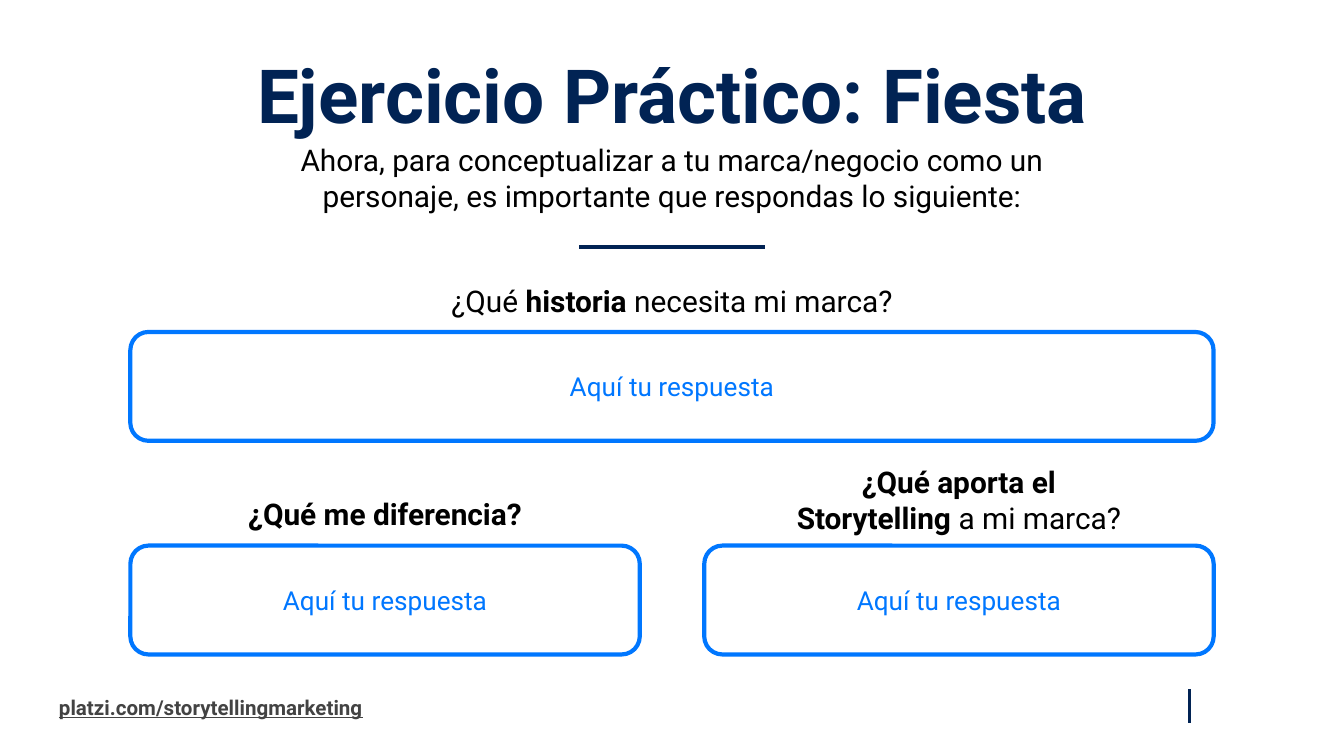
from lxml import etree
from pptx import Presentation
from pptx.dml.color import RGBColor
from pptx.enum.shapes import MSO_CONNECTOR, MSO_SHAPE
from pptx.enum.text import MSO_ANCHOR, MSO_AUTO_SIZE, PP_ALIGN
from pptx.oxml.ns import qn
from pptx.util import Inches, Pt

NAVY, BLUE, BLACK, GREY = "012354", "0077FF", "000000", "434343"
LEFT, WIDTH, GAP, ANSWER_H = 0.97, 8.06, 0.48, 0.81


def color(value):
    return RGBColor.from_string(value)


def place(sp, x, y, w, h):
    sp.left, sp.top, sp.width, sp.height = map(Inches, (x, y, w, h))


def write(sp, runs, size, hex_color, anchor=MSO_ANCHOR.MIDDLE,
          align=PP_ALIGN.CENTER, spacing=1.0, underline=False):
    """Fill a shape with one paragraph of (text, bold) runs."""
    tf = sp.text_frame
    frame = dict(word_wrap=True, auto_size=MSO_AUTO_SIZE.NONE, vertical_anchor=anchor)
    for side in ("left", "right", "top", "bottom"):
        frame["margin_" + side] = Inches(0.1)
    for name, value in frame.items():
        setattr(tf, name, value)
    p = tf.paragraphs[0]
    pPr = p._p.get_or_add_pPr()
    pPr.set("marL", "0")
    pPr.set("indent", "0")
    etree.SubElement(pPr, qn("a:buNone"))
    p.alignment, p.line_spacing, p.space_before = align, spacing, Pt(0)
    for text, bold in runs:
        r = p.add_run()
        r.text = text
        for name, value in dict(name="Roboto", size=Pt(size), bold=bold,
                                underline=underline).items():
            setattr(r.font, name, value)
        r.font.color.rgb = color(hex_color)


def add_rule(s, x1, y1, x2, y2, width):
    line = s.shapes.add_connector(MSO_CONNECTOR.STRAIGHT, *map(Inches, (x1, y1, x2, y2)))
    line.line.color.rgb = color(NAVY)
    line.line.width = Pt(width)
    etree.SubElement(line._element.spPr, qn("a:effectLst"))


def add_header(s, title, intro, x, y, w):
    place(title, x, y, w, 0.63)
    write(title, [("Ejercicio Práctico: Fiesta", True)], 40, NAVY,
          anchor=MSO_ANCHOR.TOP, spacing=0.8)
    place(intro, x + 1.29, y + 0.67, w - 2.58, 0.52)
    write(intro, [("Ahora, para conceptualizar a tu marca/negocio como un personaje, "
                   "es importante que respondas lo siguiente:", False)], 16, BLACK)
    center = x + w / 2
    add_rule(s, center - 0.69, y + 1.45, center + 0.69, y + 1.45, 2.25)


def add_question(s, body, runs, x, y, w, label_w, label_h, gap):
    """Question centred above its answer box, whose top left is x, y."""
    place(body, x + (w - label_w) / 2, y - gap - label_h, label_w, label_h)
    write(body, runs, 16, BLACK)
    box = s.shapes.add_shape(MSO_SHAPE.ROUNDED_RECTANGLE,
                             *map(Inches, (x, y, w, ANSWER_H)))
    box.shadow.inherit = False
    box.fill.background()
    box.line.color.rgb = color(BLUE)
    box.line.width = Pt(2.25)
    write(box, [("Aquí tu respuesta", False)], 14, BLUE)


def add_footer(s, x, y):
    link = s.shapes.add_textbox(*map(Inches, (x, y, 3.11, 0.34)))
    write(link, [("platzi.com/storytellingmarketing", True)], 11, GREY,
          align=PP_ALIGN.LEFT, underline=True)
    add_rule(s, x + 8.51, y + 0.04, x + 8.51, y + 0.29, 1.5)


def main():
    prs = Presentation()
    # Widescreen, 16:9
    prs.slide_width, prs.slide_height = Inches(10), Inches(10 * 9 / 16)
    # The comparison layout has a title and four bodies
    s = prs.slides.add_slide(prs.slide_layouts[4])
    title, intro, story, difference, value = s.placeholders

    add_footer(s, 0.34, 5.09)
    add_header(s, title, intro, 0.34, 0.39, 9.32)

    # One wide question over two half-width ones
    half = (WIDTH - GAP) / 2
    add_question(s, story, [("¿Qué ", False), ("historia ", True),
                            ("necesita mi marca?", False)],
                 LEFT, 2.47, WIDTH, 7.36, 0.37, 0.05)
    add_question(s, difference, [("¿Qué me diferencia?", True)],
                 LEFT, 4.06, half, 3.09, 0.37, 0.05)
    add_question(s, value, [("¿Qué aporta el Storytelling ", True), ("a mi marca?", False)],
                 LEFT + half + GAP, 4.06, half, 2.85, 0.55, 0.07)
    prs.save("out.pptx")


if __name__ == "__main__":
    main()
